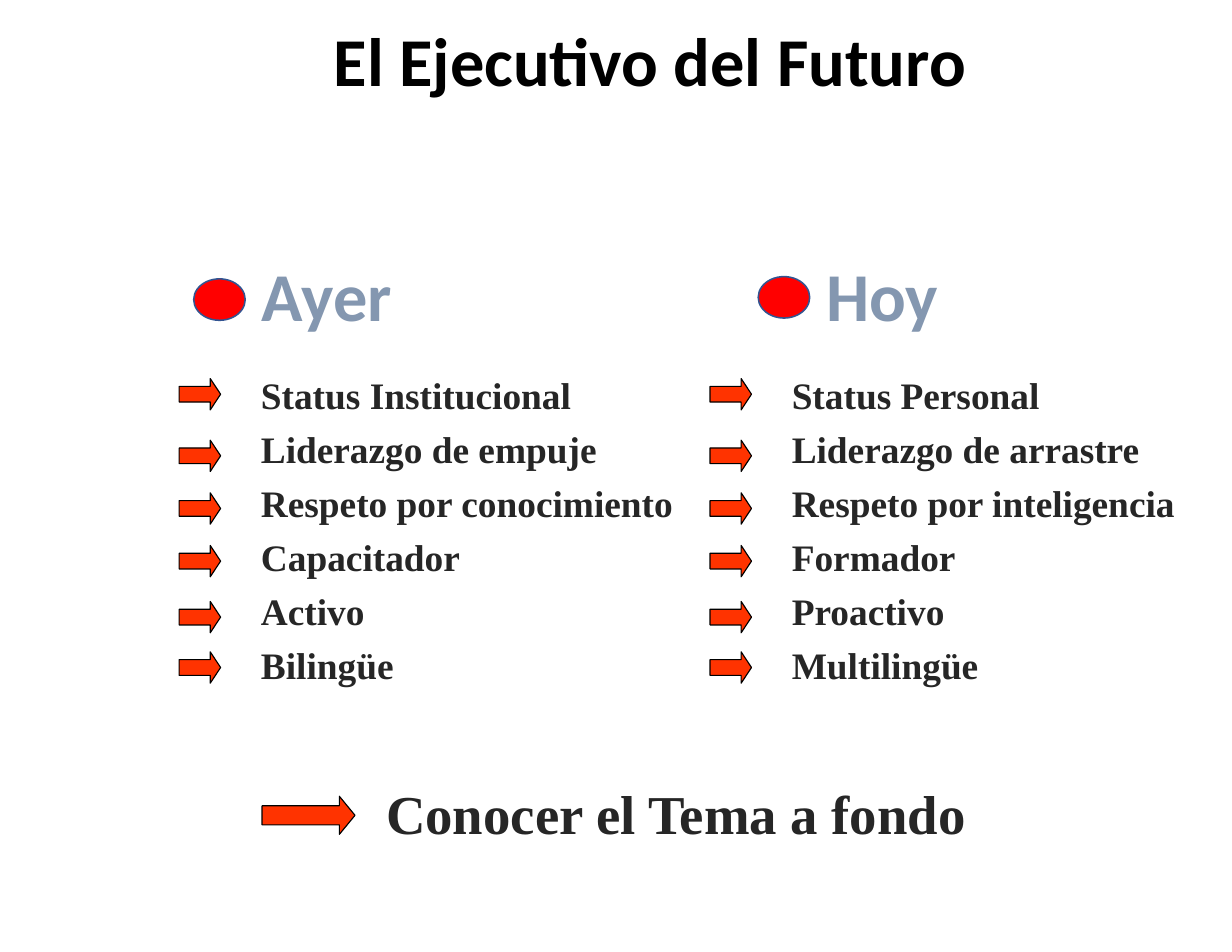
from pptx import Presentation
from pptx.dml.color import RGBColor
from pptx.enum.shapes import MSO_SHAPE as Shape
from pptx.enum.text import MSO_ANCHOR as Anchor, MSO_AUTO_SIZE as AutoSize, PP_ALIGN as Align
from pptx.util import Inches, Pt

COLORS = {
    "title": "000000",
    "heading": "8497B0",
    "body": "262626",
    "arrow": "FF3300",
    "arrow_line": "000000",
    "dot": "FF0000",
    "dot_line": "325491",
}
SANS, SERIF = "Calibri", "Times New Roman"


def color(name):
    return RGBColor.from_string(COLORS[name])


class SlideBuilder:
    """Holds the page and draws its elements in one style."""

    def __init__(self, page):
        self.page = page

    def place(self, item, left, top, width, height):
        item.left, item.top = Inches(left), Inches(top)
        item.width, item.height = Inches(width), Inches(height)

    def style(self, para, size, font_name, color_name):
        para.alignment = Align.LEFT
        para.font.size, para.font.bold = Pt(size), True
        para.font.name = font_name
        para.font.color.rgb = color(color_name)

    def fill_label(self, box, text, size, font_name, color_name):
        frame = box.text_frame
        frame.text = text
        frame.word_wrap = False
        frame.auto_size = AutoSize.SHAPE_TO_FIT_TEXT
        frame.vertical_anchor = Anchor.TOP
        self.style(frame.paragraphs[0], size, font_name, color_name)

    def title(self, text, *area):
        box = self.page.shapes.title
        self.place(box, *area)
        self.fill_label(box, text, 44, SANS, "title")

    def label(self, text, area, size, font_name, color_name):
        box = self.page.shapes.add_textbox(*map(Inches, area))
        self.fill_label(box, text, size, font_name, color_name)

    def text_list(self, items, *area):
        frame = self.page.shapes.add_textbox(*map(Inches, area)).text_frame
        frame.word_wrap = True
        frame.margin_left = frame.margin_right = Inches(0.11)
        frame.margin_top, frame.margin_bottom = Inches(0.08), Inches(0.06)
        for index, item in enumerate(items):
            para = frame.add_paragraph() if index else frame.paragraphs[0]
            para.text = item
            if index:
                para.space_before = Pt(6)
            self.style(para, 24, SERIF, "body")

    def shape(self, kind, area, name, line_width):
        item = self.page.shapes.add_shape(kind, *map(Inches, area))
        item.shadow.inherit = False
        item.fill.solid()
        item.fill.fore_color.rgb = color(name)
        item.line.color.rgb = color(name + "_line")
        item.line.width = Pt(line_width)
        return item

    def arrow(self, area, head=0.33):
        item = self.shape(Shape.RIGHT_ARROW, area, "arrow", 0.75)
        item.adjustments[0], item.adjustments[1] = 0.5, head

    def dot(self, left, top):
        self.shape(Shape.OVAL, (left, top, 0.46, 0.37), "dot", 1)


def main():
    deck = Presentation()
    deck.slide_width, deck.slide_height = Inches(11), Inches(8.5)
    builder = SlideBuilder(deck.slides.add_slide(deck.slide_layouts[5]))

    builder.title("El Ejecutivo del Futuro", 2.88, 0.11, 5.91, 0.84)

    # heading, heading left and width, dot top, arrow left, list width, items
    columns = [
        ("Ayer", 2.24, 1.37, 2.49, 1.6, 4.4,
         ["Status Institucional", "Liderazgo de empuje", "Respeto por conocimiento",
          "Capacitador", "Activo", "Bilingüe"]),
        ("Hoy", 7.28, 1.21, 2.47, 6.34, 4.03,
         ["Status Personal", "Liderazgo de arrastre", "Respeto por inteligencia",
          "Formador", "Proactivo", "Multilingüe"]),
    ]
    arrow_tops = [3.38, 3.93, 4.4, 4.87, 5.37, 5.82]
    for heading, left, width, dot_top, arrow_left, list_width, items in columns:
        builder.label(heading, (left, 2.21, width, 0.84), 44, SANS, "heading")
        builder.dot(left - 0.51, dot_top)
        builder.text_list(items, arrow_left + 0.62, 3.24, list_width, 3.39)
        for top in arrow_tops:
            builder.arrow((arrow_left, top, 0.37, 0.28))

    builder.label("Conocer el Tema a fondo", (3.35, 6.91, 5.43, 0.69), 35.2, SERIF, "body")
    builder.arrow((2.34, 7.11, 0.83, 0.34), head=0.41)

    deck.save("out.pptx")


if __name__ == "__main__":
    main()
